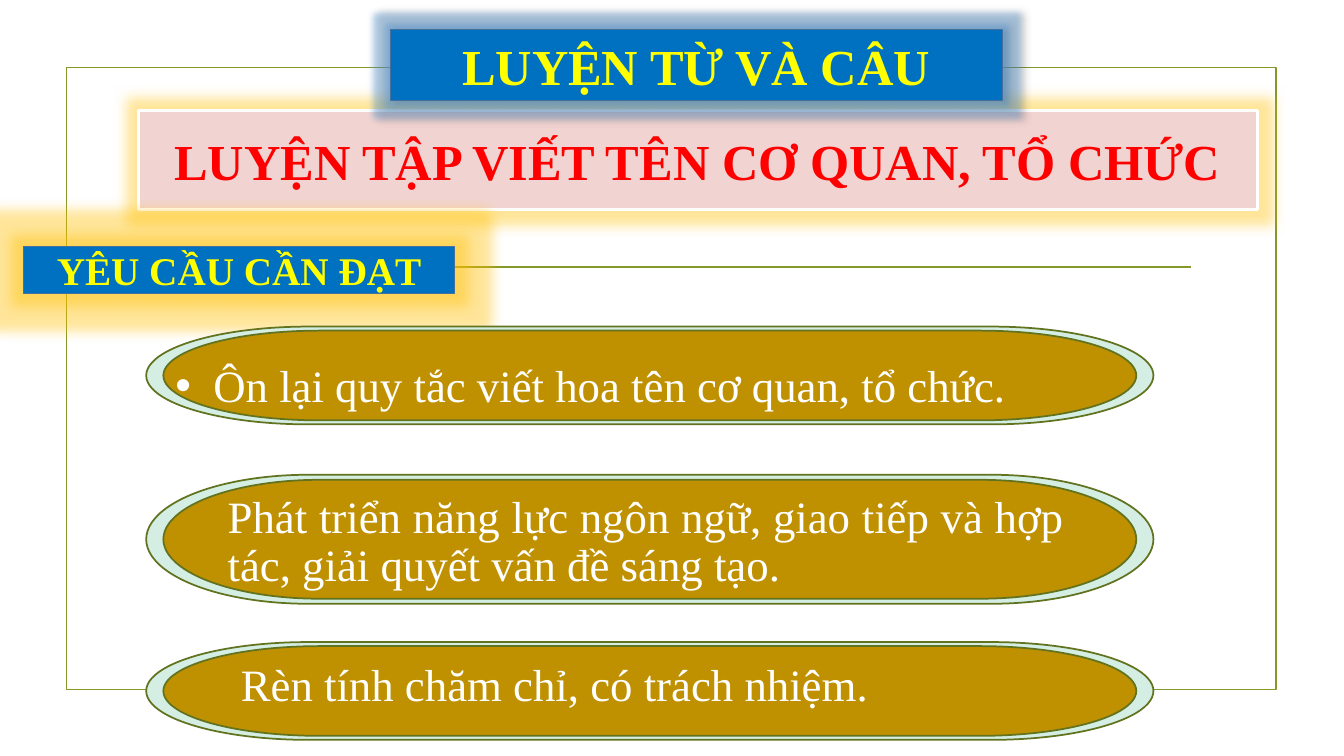
from lxml.etree import SubElement
from pptx import Presentation
from pptx.dml.color import RGBColor
from pptx.enum.shapes import MSO_CONNECTOR, MSO_SHAPE
from pptx.enum.text import MSO_ANCHOR, MSO_AUTO_SIZE, PP_ALIGN
from pptx.oxml.ns import qn
from pptx.util import Inches, Pt

OLIVE = RGBColor(0x83, 0x99, 0x2A)
MOSS = RGBColor(0x62, 0x73, 0x1F)
MINT = RGBColor(0xD4, 0xEE, 0xE3)
OCHRE = RGBColor(0xBF, 0x90, 0x00)
PINK = RGBColor(0xF1, 0xD4, 0xD2)
BLUE = RGBColor(0x00, 0x70, 0xC0)
STEEL = RGBColor(0x44, 0x70, 0x9D)
SKY = RGBColor(0x5B, 0x9B, 0xD5)
GOLD = RGBColor(0xFF, 0xC0, 0x00)
RED = RGBColor(0xFF, 0x00, 0x00)
YELLOW = RGBColor(0xFF, 0xFF, 0x00)
WHITE = RGBColor(0xFF, 0xFF, 0xFF)
BLACK = RGBColor(0x00, 0x00, 0x00)
FONT = "Times New Roman"


def place(item, box):
    """Move an item to a box given in inches."""
    item.left, item.top, item.width, item.height = map(Inches, box)


def paint(shape, fill, line, width):
    """Set the fill and outline of a shape."""
    shape.shadow.inherit = False
    if fill is None:
        shape.fill.background()
    else:
        shape.fill.solid()
        shape.fill.fore_color.rgb = fill
    shape.line.color.rgb = line
    shape.line.width = Pt(width)


def add_box(slide, kind, box, fill, line, width):
    """Add a painted preset shape."""
    shape = slide.shapes.add_shape(kind, *map(Inches, box))
    paint(shape, fill, line, width)
    return shape


def write(shape, text, size, color, align, bold=False):
    """Write one paragraph into a shape."""
    frame = shape.text_frame
    frame.word_wrap = True
    frame.auto_size = MSO_AUTO_SIZE.NONE
    frame.text = text
    par = frame.paragraphs[0]
    par.alignment = align
    font = par.font
    font.name, font.size, font.bold = FONT, Pt(size), bold
    font.color.rgb = color
    return par


def add_tint(node, color, alpha):
    """Add a colour with an opacity in percent to an effect."""
    tint = SubElement(node, qn("a:srgbClr"), val=str(color))
    SubElement(tint, qn("a:alpha"), val=str(alpha * 1000))


def add_glow(shape, color, size):
    """Give a shape a soft glow and return its effect list."""
    fx = shape.element.spPr.find(qn("a:effectLst"))
    add_tint(SubElement(fx, qn("a:glow"), rad=str(Pt(size))), color, 40)
    return fx


def add_sign(shape, text, size, color):
    """Write a bold centred heading into a shape."""
    write(shape, text, size, color, PP_ALIGN.CENTER, True)
    shape.text_frame.vertical_anchor = MSO_ANCHOR.MIDDLE


def add_frame(slide, box):
    """Draw the border and the rule inside it."""
    left, top, width, height = box
    add_box(slide, MSO_SHAPE.RECTANGLE, box, None, OLIVE, 1.25)
    level = Inches(top + 1.98)
    rule = slide.shapes.add_connector(
        MSO_CONNECTOR.STRAIGHT, Inches(left + 0.87), level,
        Inches(left + width - 0.85), level)
    rule.line.color.rgb = OLIVE
    rule.line.width = Pt(1.25)
    SubElement(rule.element.spPr, qn("a:effectLst"))


def add_title(slide, box):
    """Format the title and bring it over the border."""
    title = slide.shapes.title
    place(title, box)
    slide.shapes.element.append(title.element)
    SubElement(title.element.spPr, qn("a:effectLst"))
    paint(title, PINK, WHITE, 2.25)
    add_glow(title, GOLD, 18)
    add_sign(title, "LUYỆN TẬP VIẾT TÊN CƠ QUAN, TỔ CHỨC", 36, RED)


def add_label(slide, box, text, size, color, glow):
    """Add a glowing blue label and return its effect list."""
    label = add_box(slide, MSO_SHAPE.RECTANGLE, box, BLUE, STEEL, 0.75)
    add_sign(label, text, size, YELLOW)
    return add_glow(label, color, glow)


def add_subject(slide, box):
    """Add the subject label with its shadow."""
    fx = add_label(slide, box, "LUYỆN TỪ VÀ CÂU", 36, SKY, 8)
    shade = SubElement(fx, qn("a:outerShdw"), blurRad=str(Pt(4)),
                       dist=str(Pt(3)), dir="0", rotWithShape="0")
    add_tint(shade, BLACK, 40)


def add_pill(slide, box, inset):
    """Draw one pill inside another."""
    left, top, width, height = box
    side = 0.17
    inner = (left + side, top + inset, width - 2 * side, height - 2 * inset)
    for area, fill in ((box, MINT), (inner, OCHRE)):
        add_box(slide, MSO_SHAPE.FLOWCHART_TERMINATOR, area, fill, MOSS, 1.25)


def add_goal(slide, box, inset, shift, drop, text, body=None):
    """Draw a pill and the goal written on it."""
    left, top, width, height = box
    add_pill(slide, box, inset)
    area = (left + shift, top + drop, 8.5, height - drop - inset)
    if body is None:
        body = slide.shapes.add_textbox(*map(Inches, area))
        spacing = 0.9
    else:
        place(body, area)
        slide.shapes.element.append(body.element)
        spacing = 1.0
    body.text_frame.text = text
    props = body.text_frame.paragraphs[0]._p.get_or_add_pPr()
    props.set("marL", "0")
    props.set("indent", "0")
    SubElement(props, qn("a:buNone"))
    par = write(body, text, 32, WHITE, PP_ALIGN.JUSTIFY)
    par.line_spacing = spacing
    par.space_before = Pt(0)
    body.text_frame.vertical_anchor = MSO_ANCHOR.TOP


def main():
    """Build the slide and save it."""
    prs = Presentation()
    prs.slide_width, prs.slide_height = Inches(13.33), Inches(7.5)
    slide = prs.slides.add_slide(prs.slide_layouts[1])
    add_frame(slide, (0.66, 0.67, 12, 6.17))
    add_title(slide, (1.37, 1.1, 11.1, 0.98))
    add_subject(slide, (3.87, 0.29, 6.07, 0.71))
    add_label(slide, (0.23, 2.45, 4.28, 0.46), "YÊU CẦU CẦN ĐẠT", 28, GOLD, 18)
    left, width = 1.45, 9.99
    add_goal(slide, (left, 3.24, width, 0.97), 0.04, 0.19, 0.26,
             "Ôn lại quy tắc viết hoa tên cơ quan, tổ chức.",
             slide.placeholders[1])
    add_goal(slide, (left, 4.71, width, 1.28), 0.05, 0.71, 0.15,
             "Phát triển năng lực ngôn ngữ, giao tiếp và hợp tác, "
             "giải quyết vấn đề sáng tạo.")
    add_goal(slide, (left, 6.37, width, 0.97), 0.04, 0.84, 0.16,
             "Rèn tính chăm chỉ, có trách nhiệm.")
    prs.save("out.pptx")


if __name__ == "__main__":
    main()
